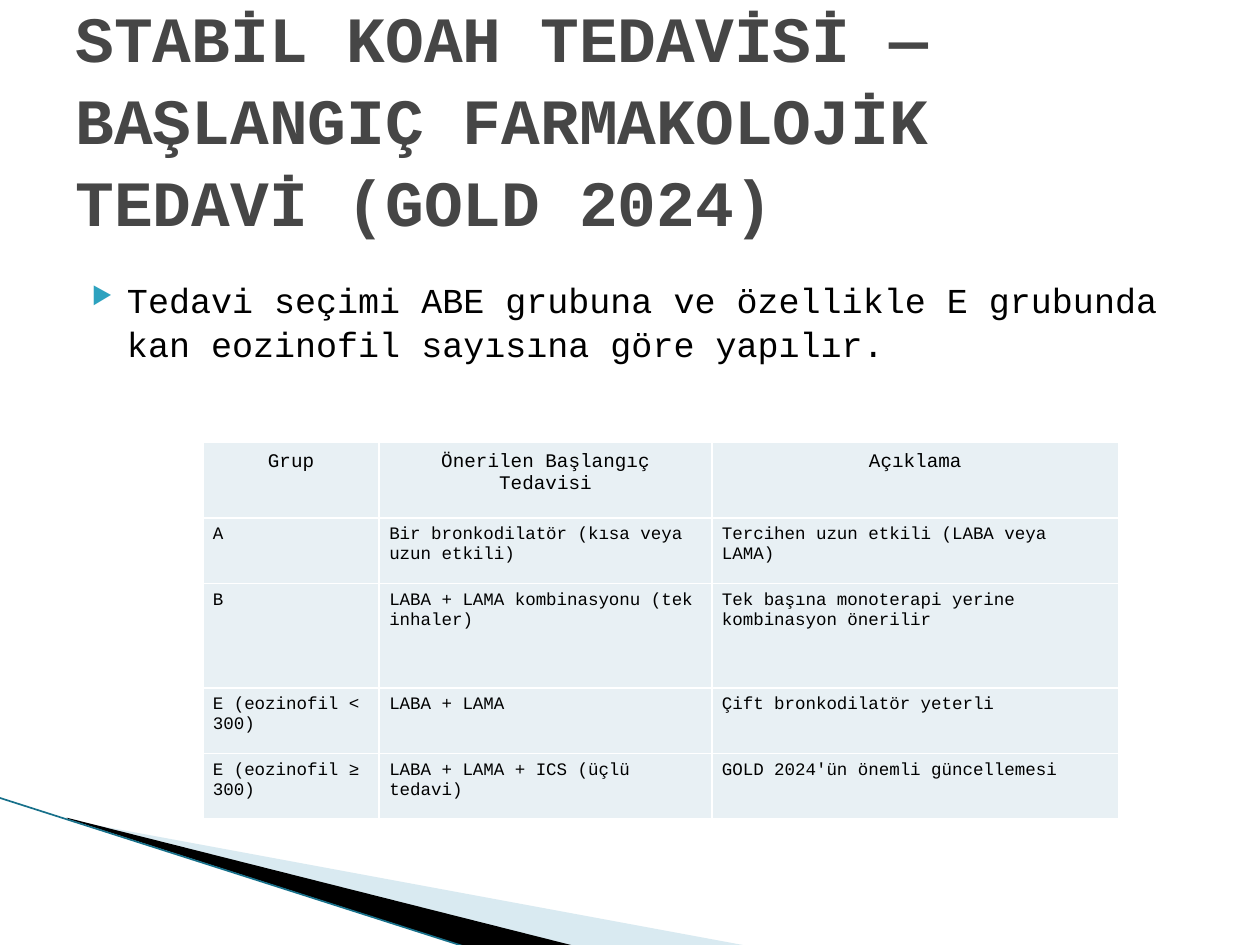
from lxml import etree
from pptx import Presentation
from pptx.dml.color import RGBColor
from pptx.enum.shapes import MSO_CONNECTOR
from pptx.enum.text import MSO_ANCHOR, PP_ALIGN
from pptx.oxml.ns import qn
from pptx.util import Inches, Pt

FONT = "Courier New"
BLACK, GREY, TEAL, LINE = "000000", "464646", "2DA2BF", "17708A"
CELL, WHITE, PALE = "E8F0F4", "FFFFFF", "A0CBDC"
STRAIGHT = MSO_CONNECTOR.STRAIGHT
MIDDLE, CENTER, LEFT = MSO_ANCHOR.MIDDLE, PP_ALIGN.CENTER, PP_ALIGN.LEFT

TITLE = "STABİL KOAH TEDAVİSİ — BAŞLANGIÇ FARMAKOLOJİK TEDAVİ (GOLD 2024)"
BODY = "Tedavi seçimi ABE grubuna ve özellikle E grubunda kan eozinofil sayısına göre yapılır."
ROWS = [
    ("Grup", "Önerilen Başlangıç Tedavisi", "Açıklama"),
    ("A", "Bir bronkodilatör (kısa veya uzun etkili)", "Tercihen uzun etkili (LABA veya LAMA)"),
    ("B", "LABA + LAMA kombinasyonu (tek inhaler)", "Tek başına monoterapi yerine kombinasyon önerilir"),
    ("E (eozinofil < 300)", "LABA + LAMA", "Çift bronkodilatör yeterli"),
    ("E (eozinofil ≥ 300)", "LABA + LAMA + ICS (üçlü tedavi)", "GOLD 2024'ün önemli güncellemesi"),
]
COL_WIDTHS = [1.4, 2.64, 3.23]
ROW_HEIGHTS = [0.6, 0.52, 0.83, 0.52, 0.52]
WEDGES = [
    ([(0.55, 6.51), (5.95, 7.51), (4.56, 7.51), (0.55, 6.5)], PALE, 40),
    ([(0.53, 6.49), (4.57, 7.51), (3.72, 7.52), (0.54, 6.5)], BLACK, 100),
]


def rgb(color):
    return RGBColor.from_string(color)


def sub(parent, tag, **attrs):
    return etree.SubElement(parent, qn(tag), attrs)


def add_run(p, text, size, color=BLACK, bold=False):
    r = p.add_run()
    r.text = text
    r.font.name, r.font.size, r.font.bold = FONT, Pt(size), bold
    r.font.color.rgb = rgb(color)


def add_wedge(s, points, color, opacity):
    fb = s.shapes.build_freeform(*map(Inches, points[0]), scale=1.0)
    fb.add_line_segments([tuple(map(Inches, pt)) for pt in points[1:]], close=True)
    sp = fb.convert_to_shape()
    sp.shadow.inherit = False
    sp.line.fill.background()
    sp.fill.solid()
    sp.fill.fore_color.rgb = rgb(color)
    if opacity < 100:
        clr = sp.fill._xPr.find(".//" + qn("a:srgbClr"))
        sub(clr, "a:alpha", val=str(opacity * 1000))


def add_text_box(s, left, top, width, height):
    tf = s.shapes.add_textbox(*map(Inches, (left, top, width, height))).text_frame
    tf.word_wrap = True
    tf.paragraphs[0].line_spacing = 1.06
    return tf


def add_bullet(p):
    pPr = p._p.get_or_add_pPr()
    pPr.set("marL", str(Inches(0.4)))
    pPr.set("indent", str(Inches(-0.28)))
    sub(sub(pPr, "a:buClr"), "a:srgbClr", val=TEAL)
    sub(pPr, "a:buSzPct", val="68000")
    sub(pPr, "a:buChar", char="▶")


def style_cell(cell, text, header):
    """Borders go in before the fill, as the schema orders them."""
    tcPr = cell._tc.get_or_add_tcPr()
    for side in ("a:lnL", "a:lnR", "a:lnT", "a:lnB"):
        ln = sub(tcPr, side, w=str(Pt(1)))
        sub(sub(ln, "a:solidFill"), "a:srgbClr", val=WHITE)
    cell.fill.solid()
    cell.fill.fore_color.rgb = rgb(CELL)
    cell.margin_left = cell.margin_right = Inches(0.08)
    cell.margin_top = cell.margin_bottom = Inches(0.07 if header else 0.06)
    p = cell.text_frame.paragraphs[0]
    p.alignment = CENTER if header else LEFT
    if not header:
        p.space_after = Pt(2)
    add_run(p, text, 11 if header else 10)


def add_treatment_table(s):
    frame = s.shapes.add_table(len(ROWS), len(COL_WIDTHS), Inches(1.61), Inches(3.51),
                               Inches(sum(COL_WIDTHS)), Inches(sum(ROW_HEIGHTS)))
    table = frame.table
    table.horz_banding = False
    for col, width in zip(table.columns, COL_WIDTHS):
        col.width = Inches(width)
    for i, (row, height) in enumerate(zip(table.rows, ROW_HEIGHTS)):
        row.height = Inches(height)
        for cell, text in zip(row.cells, ROWS[i]):
            style_cell(cell, text, header=i == 0)


def main():
    prs = Presentation()
    prs.slide_width, prs.slide_height = Inches(10), Inches(7.5)
    s = prs.slides.add_slide(prs.slide_layouts[6])

    for wedge in WEDGES:
        add_wedge(s, *wedge)
    edge = s.shapes.add_connector(STRAIGHT, *map(Inches, (-0.01, 6.33, 3.71, 7.52)))
    edge.line.color.rgb = rgb(LINE)
    edge.line.width = Pt(0.95)
    sub(edge._element.spPr, "a:effectLst")

    tf = add_text_box(s, 0.51, 2.1, 9, 4.95)
    tf.margin_top = Inches(0.09)
    p = tf.paragraphs[0]
    add_bullet(p)
    add_run(p, BODY, 20)

    tf = add_text_box(s, 0.5, 0.3, 9, 1.25)
    tf.vertical_anchor = MIDDLE
    add_run(tf.paragraphs[0], TITLE, 36.9, GREY, bold=True)

    add_treatment_table(s)
    prs.save("out.pptx")


if __name__ == "__main__":
    main()
